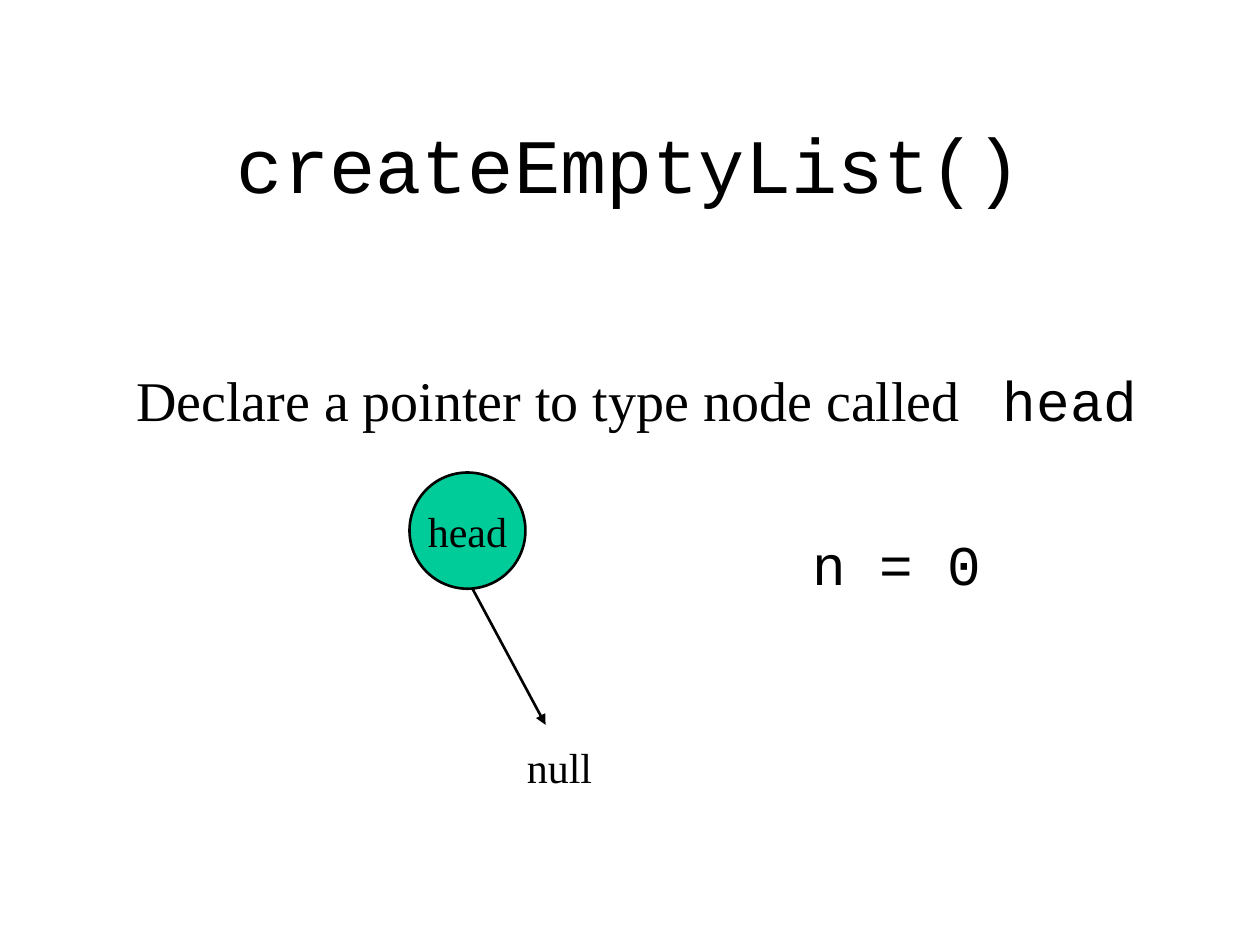
from dataclasses import dataclass

from lxml import etree
from pptx import Presentation
from pptx import util as u
from pptx.dml.color import RGBColor
from pptx.enum import shapes, text
from pptx.oxml.ns import qn

WIDE, HIGH = 10, 7.5
BLACK = RGBColor(0x00, 0x00, 0x00)
GREEN = RGBColor(0x00, 0xCC, 0x99)
SERIF, MONO = "Times New Roman", "Courier New"


@dataclass
class Box:
    """A frame in shares of the slide's width and height."""
    left: float
    top: float
    wide: float
    high: float

    def place(self) -> tuple:
        return (u.Inches(self.left * WIDE), u.Inches(self.top * HIGH),
                u.Inches(self.wide * WIDE), u.Inches(self.high * HIGH))


TITLE = Box(0.075, 0.09, 0.85, 0.165)
BODY = Box(0.075, 0.29, 0.85, 0.6)
HEAD = Box(0.325, 0.5, 0.092, 0.123)
NULL = Box(0.408, 0.778, 0.072, 0.067)
ARROW = Box(0.375, 0.623, 0.058, 0.144)


def style(run, size: float, face: str) -> None:
    run.font.size, run.font.name = u.Pt(size), face
    run.font.color.rgb = BLACK


def label(shape, words: str) -> None:
    frame = shape.text_frame
    frame.text = words
    frame.word_wrap = False
    para = frame.paragraphs[0]
    para.alignment = text.PP_ALIGN.CENTER
    style(para.runs[0], 24, SERIF)


def title(slide) -> None:
    shape = slide.shapes.title
    shape.left, shape.top, shape.width, shape.height = TITLE.place()
    frame = shape.text_frame
    frame.text = "createEmptyList()"
    frame.vertical_anchor = text.MSO_ANCHOR.MIDDLE
    para = frame.paragraphs[0]
    para.alignment = text.PP_ALIGN.CENTER
    style(para.runs[0], 44, MONO)


def body(slide) -> None:
    frame = slide.shapes.add_textbox(*BODY.place()).text_frame
    frame.word_wrap = True
    frame.margin_left, frame.margin_top = u.Inches(0.33), u.Inches(0.73)
    frame.text = "Declare a pointer to type node called\t"
    first, count = frame.paragraphs[0], frame.add_paragraph()
    style(first.runs[0], 32, SERIF)
    name = first.add_run()
    name.text = "head"
    style(name, 32, MONO)
    tabs = etree.SubElement(first._p.get_or_add_pPr(), qn("a:tabLst"))
    etree.SubElement(tabs, qn("a:tab"), pos=str(u.Inches(6.88)), algn="l")

    count.text = "n = 0"
    count.space_before = u.Pt(55)
    count._p.get_or_add_pPr().set("marL", str(u.Inches(5.37)))
    style(count.runs[0], 32, MONO)


def node(slide) -> None:
    shape = slide.shapes.add_shape(shapes.MSO_SHAPE.OVAL, *HEAD.place())
    shape.shadow.inherit = False
    shape.fill.solid()
    shape.fill.fore_color.rgb = GREEN
    shape.line.color.rgb = BLACK
    shape.line.width = u.Pt(1.5)
    label(shape, "head")
    shape.text_frame.vertical_anchor = text.MSO_ANCHOR.MIDDLE


def arrow(slide) -> None:
    left, top, wide, high = ARROW.place()
    link = slide.shapes.add_connector(
        shapes.MSO_CONNECTOR.STRAIGHT, left, top, left + wide, top + high)
    link.line.color.rgb = BLACK
    link.line.width = u.Pt(1.5)
    etree.SubElement(link.line._get_or_add_ln(), qn("a:tailEnd"), type="triangle")
    etree.SubElement(link._element.spPr, qn("a:effectLst"))


def main() -> None:
    deck = Presentation()
    deck.slide_width, deck.slide_height = u.Inches(WIDE), u.Inches(HIGH)
    slide = deck.slides.add_slide(deck.slide_layouts[5])
    title(slide)
    body(slide)
    node(slide)
    arrow(slide)
    label(slide.shapes.add_textbox(*NULL.place()), "null")
    deck.save("out.pptx")


if __name__ == "__main__":
    main()
